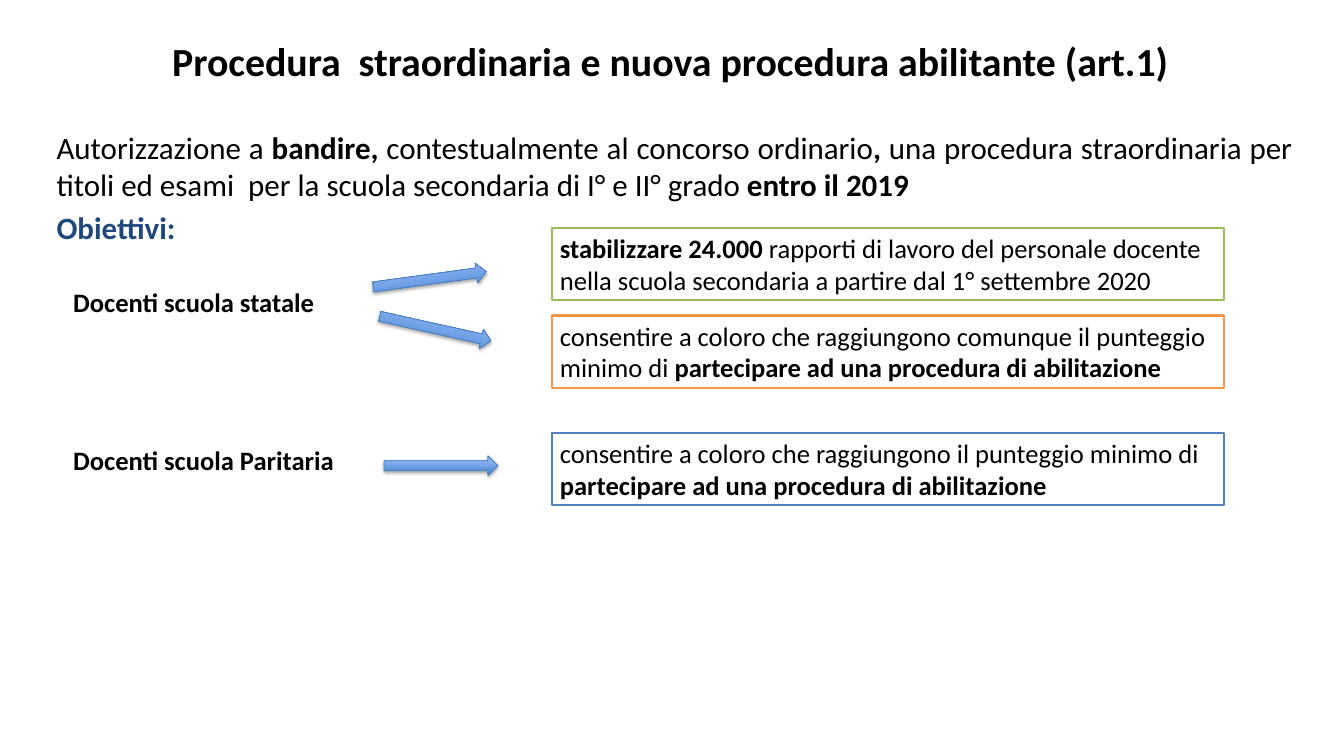
import pptx
import pptx.dml.color
import pptx.enum.shapes
import pptx.enum.text
import pptx.oxml
import pptx.oxml.ns
import pptx.util
from pptx.util import Inches, Pt

RGBColor = pptx.dml.color.RGBColor
ALIGN = pptx.enum.text.PP_ALIGN
ANCHOR = pptx.enum.text.MSO_ANCHOR
SHAPE = pptx.enum.shapes.MSO_SHAPE

BLACK = RGBColor(0x00, 0x00, 0x00)
WHITE = RGBColor(0xFF, 0xFF, 0xFF)
NAVY = RGBColor(0x1F, 0x49, 0x7D)
GREEN = RGBColor(0x9B, 0xBB, 0x59)
ORANGE = RGBColor(0xF7, 0x96, 0x46)
BLUE = RGBColor(0x4F, 0x81, 0xBD)
ARROW_DARK = RGBColor(0x3F, 0x80, 0xCE)
ARROW_LIGHT = RGBColor(0xA4, 0xC4, 0xFF)
ARROW_LINE = RGBColor(0x4B, 0x7E, 0xBC)

# Each paragraph is a list of (text, bold) runs.
TITLE = [("Procedura  straordinaria e nuova procedura abilitante (art.1) ", True)]
INTRO = [
    ("Autorizzazione a ", False),
    ("bandire, ", True),
    ("contestualmente al concorso ordinario", False),
    (",", True),
    (" una procedura straordinaria per titoli ed esami  per la scuola secondaria "
     "di I° e II° grado ", False),
    ("entro il 2019", True),
]
OBJECTIVES = [("Obiettivi:", True)]

# Text, top
TEACHER_GROUPS = [
    ("Docenti scuola statale", 3.54),
    ("Docenti scuola Paritaria", 5.52),
]
# Runs, outline colour, top
GOALS = [
    ([("stabilizzare 24.000 ", True),
      ("rapporti di lavoro del personale docente nella scuola secondaria "
       "a partire dal 1° settembre 2020", False)], GREEN, 2.86),
    ([("consentire a coloro che raggiungono comunque il punteggio minimo di ", False),
      ("partecipare ad una procedura di abilitazione", True)], ORANGE, 3.96),
    ([("consentire a coloro che raggiungono il punteggio minimo di ", False),
      ("partecipare ad una procedura di abilitazione", True)], BLUE, 5.43),
]
# Left, top, rotation
ARROWS = [(4.68, 3.38, 352.3), (4.75, 4, 12.5), (4.82, 5.72, 0)]

ARROW_SHADOW = (
    '<a:outerShdw %s blurRad="40000" dist="23000" dir="5400000" rotWithShape="0">'
    '<a:srgbClr val="000000"><a:alpha val="35000"/></a:srgbClr></a:outerShdw>'
    % pptx.oxml.ns.nsdecls("a")
)


def write_paragraph(paragraph, runs, size, color=BLACK, alignment=ALIGN.LEFT):
    paragraph.alignment = alignment
    paragraph.font.name = "Calibri"
    paragraph.font.size = Pt(size)
    paragraph.font.color.rgb = color
    for text, bold in runs:
        run = paragraph.add_run()
        run.text = text
        run.font.bold = bold


def add_text_box(slide, left, top, width, height, margins=(0.1, 0.05)):
    box = slide.shapes.add_textbox(Inches(left), Inches(top), Inches(width), Inches(height))
    frame = box.text_frame
    frame.word_wrap = True
    frame.margin_left = frame.margin_right = Inches(margins[0])
    frame.margin_top = frame.margin_bottom = Inches(margins[1])
    return frame


def add_goal(slide, runs, color, top):
    goal = slide.shapes.add_shape(
        SHAPE.RECTANGLE, Inches(6.93), Inches(top), Inches(8.43), Inches(0.91))
    goal.shadow.inherit = False
    goal.fill.solid()
    goal.fill.fore_color.rgb = WHITE
    goal.line.color.rgb = color
    goal.line.width = Pt(2)
    goal.text_frame.word_wrap = True
    goal.text_frame.vertical_anchor = ANCHOR.TOP
    write_paragraph(goal.text_frame.paragraphs[0], runs, 24)


def add_arrow(slide, left, top, rotation):
    arrow = slide.shapes.add_shape(
        SHAPE.RIGHT_ARROW, Inches(left), Inches(top), Inches(1.43), Inches(0.25))
    arrow.rotation = rotation
    arrow.fill.gradient()
    arrow.fill.gradient_angle = 90
    for stop, color in zip(arrow.fill.gradient_stops, (ARROW_DARK, ARROW_LIGHT)):
        stop.color.rgb = color
    arrow.line.color.rgb = ARROW_LINE
    arrow.line.width = Pt(0.75)
    arrow.shadow.inherit = False
    effects = arrow._element.spPr.find(pptx.oxml.ns.qn("a:effectLst"))
    effects.append(pptx.oxml.parse_xml(ARROW_SHADOW))


def main():
    presentation = pptx.Presentation()
    presentation.slide_width = Inches(16.87)
    presentation.slide_height = Inches(9.45)
    slide = presentation.slides.add_slide(presentation.slide_layouts[6])

    title = add_text_box(slide, 0.42, 0.22, 16.11, 1.08, margins=(0.15, 0.08))
    title.vertical_anchor = ANCHOR.MIDDLE
    write_paragraph(title.paragraphs[0], TITLE, 36, alignment=ALIGN.CENTER)

    intro = add_text_box(slide, 0.56, 1.53, 15.81, 1.77, margins=(0.15, 0.08))
    write_paragraph(intro.paragraphs[0], INTRO, 28, alignment=ALIGN.JUSTIFY)
    objectives = intro.add_paragraph()
    objectives.space_before = Pt(5.6)
    write_paragraph(objectives, OBJECTIVES, 28, NAVY, ALIGN.JUSTIFY)

    for text, top in TEACHER_GROUPS:
        label = add_text_box(slide, 0.82, top, 4, 0.5)
        write_paragraph(label.paragraphs[0], [(text, True)], 24)
    for runs, color, top in GOALS:
        add_goal(slide, runs, color, top)
    for left, top, rotation in ARROWS:
        add_arrow(slide, left, top, rotation)

    presentation.save("out.pptx")


if __name__ == "__main__":
    main()
